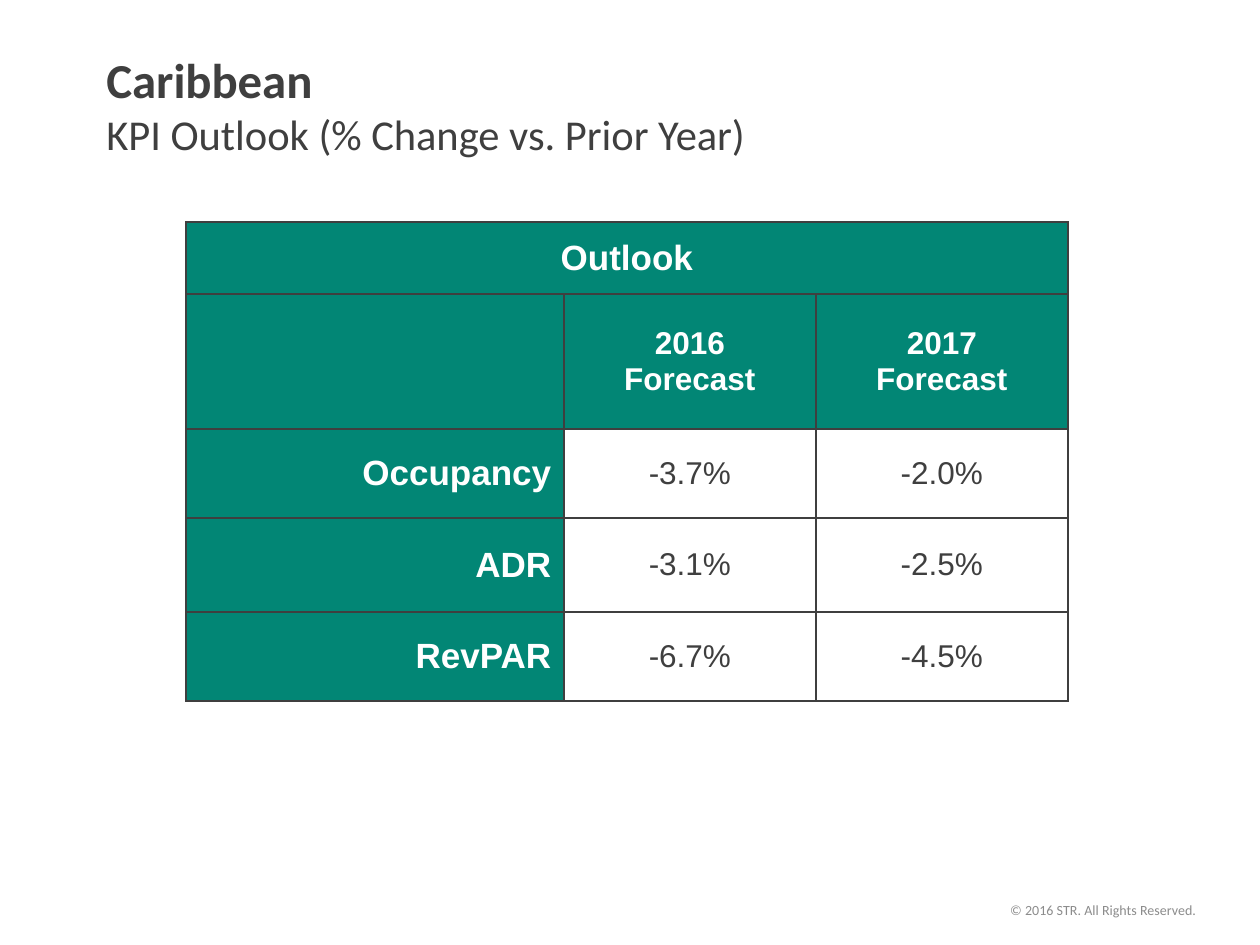
from lxml import etree
from pptx import Presentation
from pptx.dml.color import RGBColor
from pptx.enum.text import MSO_ANCHOR, PP_ALIGN
from pptx.oxml.ns import qn
from pptx.util import Pt

PX = 914400 // 126
LEFT, CENTER, RIGHT = PP_ALIGN.LEFT, PP_ALIGN.CENTER, PP_ALIGN.RIGHT
MIDDLE = MSO_ANCHOR.MIDDLE
GREEN, DARK, GRAY, WHITE = "028675", "3F3F3F", "8C8C8C", "FFFFFF"

COLUMNS = [378, 252, 252]
ROWS = [72, 135, 89, 94, 89]
CELLS = [
    ["Outlook", "", ""],
    ["", "2016\nForecast", "2017\nForecast"],
    ["Occupancy", "-3.7%", "-2.0%"],
    ["ADR", "-3.1%", "-2.5%"],
    ["RevPAR", "-6.7%", "-4.5%"],
]


def px(n):
    return n * PX


def rgb(color):
    return RGBColor.from_string(color)


def style(p, size, color, font, bold=False, align=LEFT):
    p.alignment = align
    p.font.size = Pt(size)
    p.font.name = font
    p.font.bold = bold
    p.font.color.rgb = rgb(color)


def add_text(slide, x, y, w, h, lines, color, align=LEFT):
    tf = slide.shapes.add_textbox(px(x), px(y), px(w), px(h)).text_frame
    tf.word_wrap = True
    tf.vertical_anchor = MIDDLE
    tf.text = "\n".join(text for text, size, bold in lines)
    for p, (text, size, bold) in zip(tf.paragraphs, lines):
        style(p, size, color, "Calibri", bold, align)


def add_borders(cell, color):
    tc_pr = cell._tc.get_or_add_tcPr()
    for side in ("a:lnL", "a:lnR", "a:lnT", "a:lnB"):
        ln = etree.SubElement(tc_pr, qn(side), w=str(Pt(1)))
        fill = etree.SubElement(ln, qn("a:solidFill"))
        etree.SubElement(fill, qn("a:srgbClr"), val=color)


def fill_cell(cell, text, row, col):
    is_value = row > 1 and col > 0
    add_borders(cell, DARK)
    cell.vertical_anchor = MIDDLE
    if is_value:
        cell.fill.background()
        cell.margin_left = cell.margin_right = px(34)
        cell.margin_top = cell.margin_bottom = px(13)
    else:
        cell.fill.solid()
        cell.fill.fore_color.rgb = rgb(GREEN)
    cell.text = text
    size = 20 if row == 0 or (row > 1 and col == 0) else 18
    align = RIGHT if row > 1 and col == 0 else CENTER
    for p in cell.text_frame.paragraphs:
        style(p, size, DARK if is_value else WHITE, "Arial", not is_value, align)


def add_outlook_table(slide, x, y):
    table = slide.shapes.add_table(
        len(ROWS), len(COLUMNS), px(x), px(y), px(sum(COLUMNS)), px(sum(ROWS))
    ).table
    table.first_row = table.horz_banding = False
    for column, width in zip(table.columns, COLUMNS):
        column.width = px(width)
    for row, height in zip(table.rows, ROWS):
        row.height = px(height)
    for i, texts in enumerate(CELLS):
        for j, text in enumerate(texts):
            fill_cell(table.cell(i, j), text, i, j)
    table.cell(0, 0).merge(table.cell(0, len(COLUMNS) - 1))


def main():
    prs = Presentation()
    prs.slide_width, prs.slide_height = px(1260), px(945)
    slide = prs.slides.add_slide(prs.slide_layouts[6])
    title = [
        ("Caribbean", 27.9, True),
        ("KPI Outlook (% Change vs. Prior Year)", 24.3, False),
    ]
    add_text(slide, 94, 42, 1166, 124, title, DARK)
    add_outlook_table(slide, 186, 222)
    footer = [("© 2016 STR. All Rights Reserved.", 8, False)]
    add_text(slide, 879, 895, 330, 30, footer, GRAY, RIGHT)
    prs.save("out.pptx")


if __name__ == "__main__":
    main()
